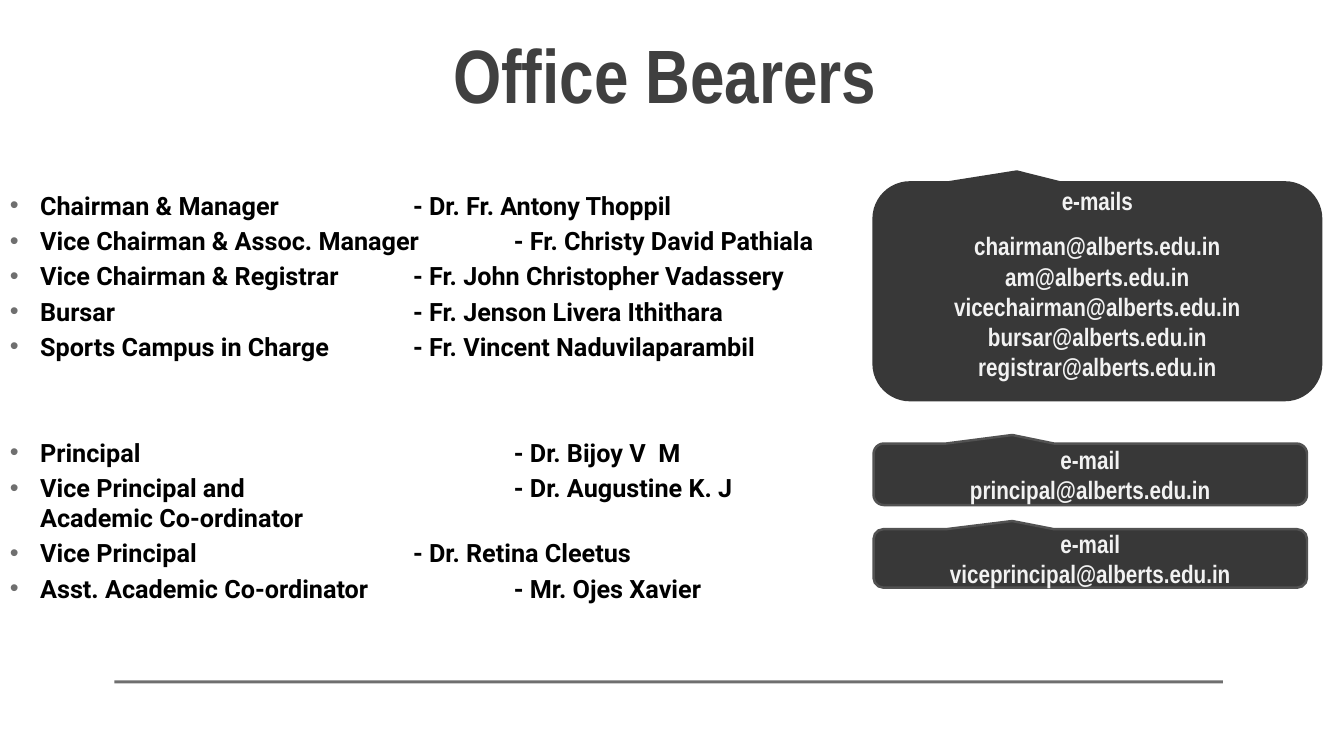
from lxml import etree
from pptx import Presentation
from pptx import util as u
from pptx.dml.color import RGBColor
from pptx.enum import shapes, text
from pptx.oxml import ns

WIDTH, HEIGHT = u.Inches(13.333), u.Inches(7.5)
CALLOUT_LEFT = 65
INK, GREY = "383838", "6F6F6F"

TITLE = {"name": "Arial Narrow", "size": u.Pt(54), "bold": True}
ROLE = {"name": "Roboto", "size": u.Pt(18), "bold": True}
MAIL = {"name": "Arial Narrow", "size": u.Pt(18), "bold": True}

MANAGEMENT = [
    "Chairman & Manager\t\t- Dr. Fr. Antony Thoppil",
    "Vice Chairman & Assoc. Manager\t- Fr. Christy David Pathiala",
    "Vice Chairman & Registrar\t- Fr. John Christopher Vadassery",
    "Bursar\t\t\t- Fr. Jenson Livera Ithithara",
    "Sports Campus in Charge\t- Fr. Vincent Naduvilaparambil",
]
ACADEMICS = [
    "Principal\t\t\t\t- Dr. Bijoy V  M",
    "Vice Principal and\t\t\t- Dr. Augustine K. J\vAcademic Co-ordinator",
    "Vice Principal\t\t\t- Dr. Retina Cleetus",
    "Asst. Academic Co-ordinator\t\t- Mr. Ojes Xavier",
]
MANAGEMENT_MAILS = ["e-mails"] + [
    f"{user}@alberts.edu.in"
    for user in ("chairman", "am", "vicechairman", "bursar", "registrar")
]


def color(value):
    return RGBColor.from_string(value)


def place(left, top, width, height):
    """Turn percentages of the slide's size into lengths."""
    return [int(share * side / 100) for share, side in
            zip((left, top, width, height), (WIDTH, HEIGHT) * 2)]


def write(para, words, style, ink):
    para.text = words
    for span in para.runs:
        for key, value in style.items():
            setattr(span.font, key, value)
        span.font.color.rgb = color(ink)


def paragraphs(frame, lines):
    """Yield a paragraph with each line, reusing the frame's first one."""
    for index, line in enumerate(lines):
        yield frame.add_paragraph() if index else frame.paragraphs[0], line


def add_bullet(para):
    props = para._p.get_or_add_pPr()
    for key, value in (("marL", u.Inches(0.3)), ("indent", -u.Inches(0.3)),
                       ("defTabSz", u.Inches(1))):
        props.set(key, str(int(value)))
    tint = etree.SubElement(props, ns.qn("a:buClr"))
    etree.SubElement(tint, ns.qn("a:srgbClr"), val=GREY)
    etree.SubElement(props, ns.qn("a:buFont"), typeface="Arial")
    etree.SubElement(props, ns.qn("a:buChar"), char="•")


def add_roles(slide, area, groups):
    frame = slide.shapes.add_textbox(*place(*area)).text_frame
    frame.word_wrap = True
    frame.vertical_anchor = text.MSO_ANCHOR.MIDDLE
    lines = [line for group in groups for line in group]
    openers = [group[0] for group in groups]
    for para, line in paragraphs(frame, lines):
        add_bullet(para)
        if line != lines[0]:
            para.space_before = u.Pt(54 if line in openers else 3.6)
        write(para, line, ROLE, "000000")


def add_panel(slide, kind, area, fill):
    panel = slide.shapes.add_shape(kind, *place(*area))
    panel.shadow.inherit = False
    panel.fill.solid()
    panel.fill.fore_color.rgb = color(fill)
    panel.line.fill.background()
    return panel


def add_callout(slide, area, tip, edge, lines, open_lines=0, bottom=0.05):
    """Draw a speech panel; its first open_lines lines are spaced wider."""
    callout = add_panel(
        slide, shapes.MSO_SHAPE.ROUNDED_RECTANGULAR_CALLOUT,
        (CALLOUT_LEFT, *area), INK)
    for index, value in enumerate((*tip, 0.167)):
        callout.adjustments[index] = value
    callout.line.color.rgb = color(edge)
    callout.line.width = u.Pt(1.75)
    frame = callout.text_frame
    frame.word_wrap = True
    frame.vertical_anchor = text.MSO_ANCHOR.MIDDLE
    frame.margin_bottom = u.Inches(bottom)
    for para, line in paragraphs(frame, lines):
        para.alignment = text.PP_ALIGN.CENTER
        if line in lines[:open_lines]:
            para.line_spacing = 1.5
        write(para, line, MAIL, "F2F2F2")


def add_title(slide, area, words):
    frame = slide.shapes.add_textbox(*place(*area)).text_frame
    frame.word_wrap = False
    frame.paragraphs[0].alignment = text.PP_ALIGN.CENTER
    write(frame.paragraphs[0], words, TITLE, "404040")


def main():
    deck = Presentation()
    deck.slide_width, deck.slide_height = WIDTH, HEIGHT
    slide = deck.slides.add_slide(deck.slide_layouts[6])
    add_panel(slide, shapes.MSO_SHAPE.RECTANGLE, (8.5, 90, 82.5, 0.4), GREY)
    add_roles(slide, (0, 10.4, 91.45, 84.13), (MANAGEMENT, ACADEMICS))
    for top, height, user in ((58.67, 8.13, "principal"),
                              (70, 7.73, "viceprincipal")):
        add_callout(slide, (top, 32.25, height), (-0.18, -0.64), "525252",
                    ["e-mail", f"{user}@alberts.edu.in"])
    add_callout(slide, (24.13, 33.3, 28.8), (-0.18, -0.55), INK,
                MANAGEMENT_MAILS, open_lines=2, bottom=0.35)
    add_title(slide, (32.86, 3.07, 33.23, 13.47), "Office Bearers")
    deck.save("out.pptx")


if __name__ == "__main__":
    main()
